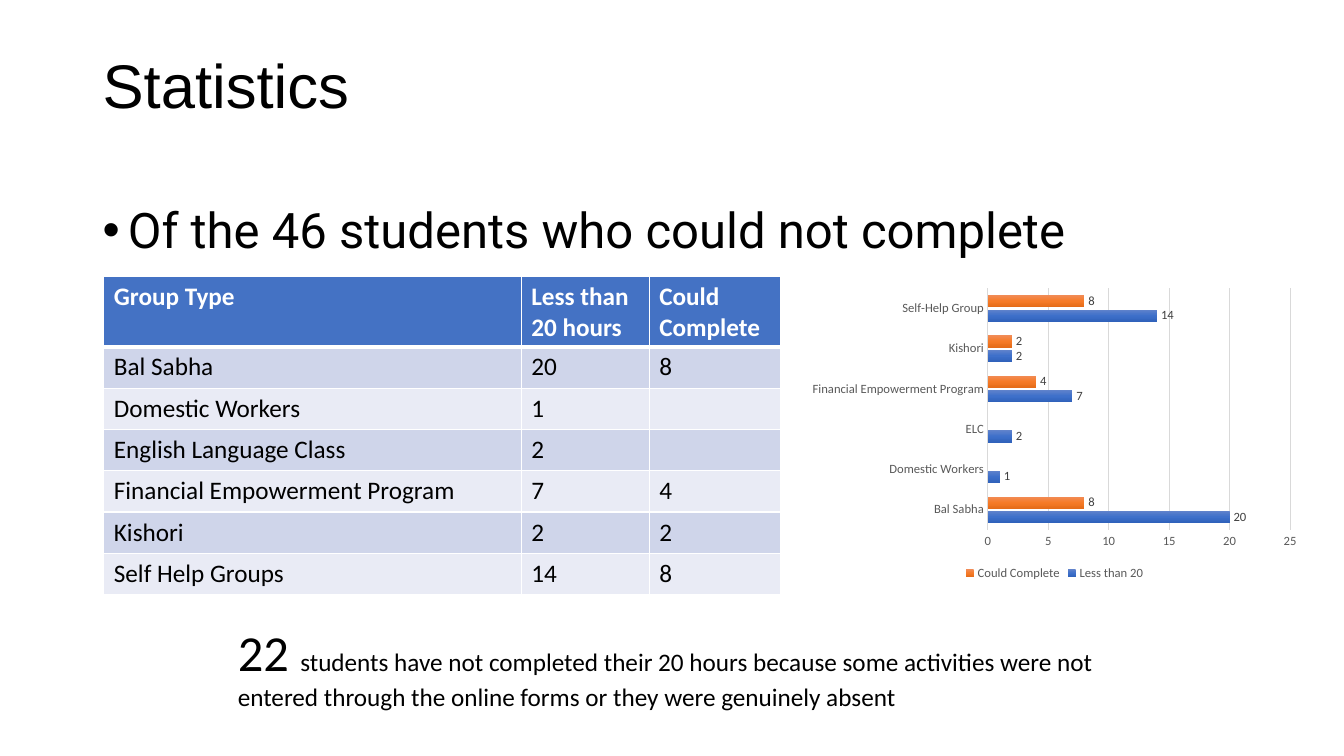
from lxml import etree
from copy import deepcopy
from pptx import Presentation
from pptx.chart.data import CategoryChartData
from pptx.dml.color import RGBColor
from pptx.enum.chart import XL_CHART_TYPE, XL_LABEL_POSITION, XL_LEGEND_POSITION, XL_TICK_MARK
from pptx.enum.text import MSO_ANCHOR
from pptx.oxml.ns import qn
from pptx.util import Inches, Pt

BARS = XL_CHART_TYPE.BAR_CLUSTERED
OUTSIDE = XL_LABEL_POSITION.OUTSIDE_END
BOTTOM = XL_LEGEND_POSITION.BOTTOM
NO_TICK = XL_TICK_MARK.NONE
TOP, MIDDLE = MSO_ANCHOR.TOP, MSO_ANCHOR.MIDDLE

HOURS_TABLE = [
    ("Group Type", "Less than 20 hours", "Could Complete"),
    ("Bal Sabha", "20", "8"),
    ("Domestic Workers", "1", ""),
    ("English Language Class", "2", ""),
    ("Financial Empowerment Program", "7", "4"),
    ("Kishori", "2", "2"),
    ("Self Help Groups", "14", "8"),
]
GROUPS = ["Bal Sabha", "Domestic Workers", "ELC",
          "Financial Empowerment Program", "Kishori", "Self-Help Group"]
SERIES = [
    ("Less than 20", (20, 1, 2, 7, 2, 14), ("6183CB", "3E70CA", "3062BB")),
    ("Could Complete", (8, None, None, 4, 2, 8), ("F18C57", "F67B28", "E56C19")),
]


def color(value):
    return RGBColor.from_string(value)


def set_font(font, size, ink="000000", **values):
    font.size = Pt(size)
    font.color.rgb = color(ink)
    for name, value in {"name": "Calibri", "bold": False, **values}.items():
        setattr(font, name, value)


def set_line(line, ink, width):
    line.color.rgb = color(ink)
    line.width = Pt(width)


class SlideBuilder:
    white = "FFFFFF"
    header = "4472C4"
    bands = ("E9EBF5", "CFD5EA")
    axis_ink = "595959"
    grid = "D9D9D9"

    def __init__(self, page):
        self.page = page

    def text(self, place, spans, anchor=TOP, spacing=1.0, bullet=None):
        box = self.page.shapes.add_textbox(*map(Inches, place))
        frame = box.text_frame
        frame.word_wrap = True
        frame.vertical_anchor = anchor
        para = frame.paragraphs[0]
        para.line_spacing = spacing
        if bullet:
            properties = para._p.get_or_add_pPr()
            properties.set("marL", str(Inches(0.25)))
            properties.set("indent", str(-Inches(0.25)))
            etree.SubElement(properties, qn("a:buFont")).set("typeface", "Arial")
            etree.SubElement(properties, qn("a:buChar")).set("char", bullet)
        for words, size, family in spans:
            span = para.add_run()
            span.text = words
            set_font(span.font, size, name=family)

    def border(self, cell, bottom):
        properties = cell._tc.get_or_add_tcPr()
        widths = {"lnL": 1, "lnR": 1, "lnT": 1, "lnB": bottom}
        for index, (side, width) in enumerate(widths.items()):
            line = etree.Element(qn(f"a:{side}"), w=str(Pt(width)))
            fill = etree.SubElement(line, qn("a:solidFill"))
            etree.SubElement(fill, qn("a:srgbClr")).set("val", self.white)
            properties.insert(index, line)

    def table(self, place, rows, widths, heights):
        frame = self.page.shapes.add_table(len(rows), len(widths), *map(Inches, place))
        table = frame.table
        for column, width in zip(table.columns, widths):
            column.width = Inches(width)
        for row, height in zip(table.rows, heights):
            row.height = Inches(height)
        for row_index, row in enumerate(rows):
            is_header = row_index == 0
            for column_index, words in enumerate(row):
                cell = table.cell(row_index, column_index)
                cell.fill.solid()
                cell.fill.fore_color.rgb = color(
                    self.header if is_header else self.bands[row_index % 2])
                self.border(cell, 3 if is_header else 1)
                if words:
                    span = cell.text_frame.paragraphs[0].add_run()
                    span.text = words
                    set_font(span.font, 18, self.white if is_header else "000000",
                             bold=is_header)

    def gradient(self, series, inks):
        fill = series.format.fill
        fill.gradient()
        fill.gradient_angle = 270
        stops = series._element.find(".//" + qn("a:gsLst"))
        stops.append(deepcopy(stops[0]))
        for stop, ink, position in zip(fill.gradient_stops, inks, (0, 0.5, 1)):
            stop.color.rgb = color(ink)
            stop.position = position

    def bar_chart(self, place, groups, series_rows):
        data = CategoryChartData()
        data.categories = groups
        for name, values, _ in series_rows:
            data.add_series(name, values)
        chart = self.page.shapes.add_chart(BARS, *map(Inches, place), data).chart
        set_font(chart.font, 10)
        chart.has_title = False
        chart.has_legend = True
        chart.legend.position = BOTTOM
        chart.legend.include_in_layout = False
        set_font(chart.legend.font, 9, self.axis_ink)
        for axis in (chart.category_axis, chart.value_axis):
            axis.major_tick_mark = axis.minor_tick_mark = NO_TICK
            set_font(axis.tick_labels.font, 9, self.axis_ink)
        set_line(chart.category_axis.format.line, self.grid, 1)
        values_axis = chart.value_axis
        values_axis.minimum_scale, values_axis.maximum_scale = 0, 25
        values_axis.major_unit = 5
        values_axis.format.line.fill.background()
        set_line(values_axis.major_gridlines.format.line, self.grid, 0.75)
        plot = chart.plots[0]
        plot.gap_width, plot.overlap = 115, -20
        plot.vary_by_categories = False
        for series, (_, _, inks) in zip(plot.series, series_rows):
            self.gradient(series, inks)
            labels = series.data_labels
            labels.show_value = True
            labels.position = OUTSIDE
            set_font(labels.font, 9, "404040")


def main():
    deck = Presentation()
    deck.slide_width, deck.slide_height = Inches(13.33), Inches(7.5)
    slide = SlideBuilder(deck.slides.add_slide(deck.slide_layouts[6]))
    slide.text((0.92, 0.31, 9.55, 1.13), [("Statistics", 44, "Arial")], MIDDLE, 0.9)
    slide.text((0.92, 2, 11.5, 4.76),
               [("Of the 46 students who could not complete", 35, "Roboto")],
               spacing=0.9, bullet="•")
    slide.table((1.03, 2.74, 6.71, 3.13), HOURS_TABLE,
                (4.14, 1.27, 1.3), [0.7] + [0.41] * 6)
    slide.bar_chart((7.96, 2.8, 5, 3), GROUPS, SERIES)
    slide.text((2.26, 6.11, 8.82, 1.01), [
        ("22 ", 36, "Calibri"),
        ("students have not completed their 20 hours because some activities were not "
         "entered through the online forms or they were genuinely absent", 18, "Calibri"),
    ])
    deck.save("out.pptx")


if __name__ == "__main__":
    main()
